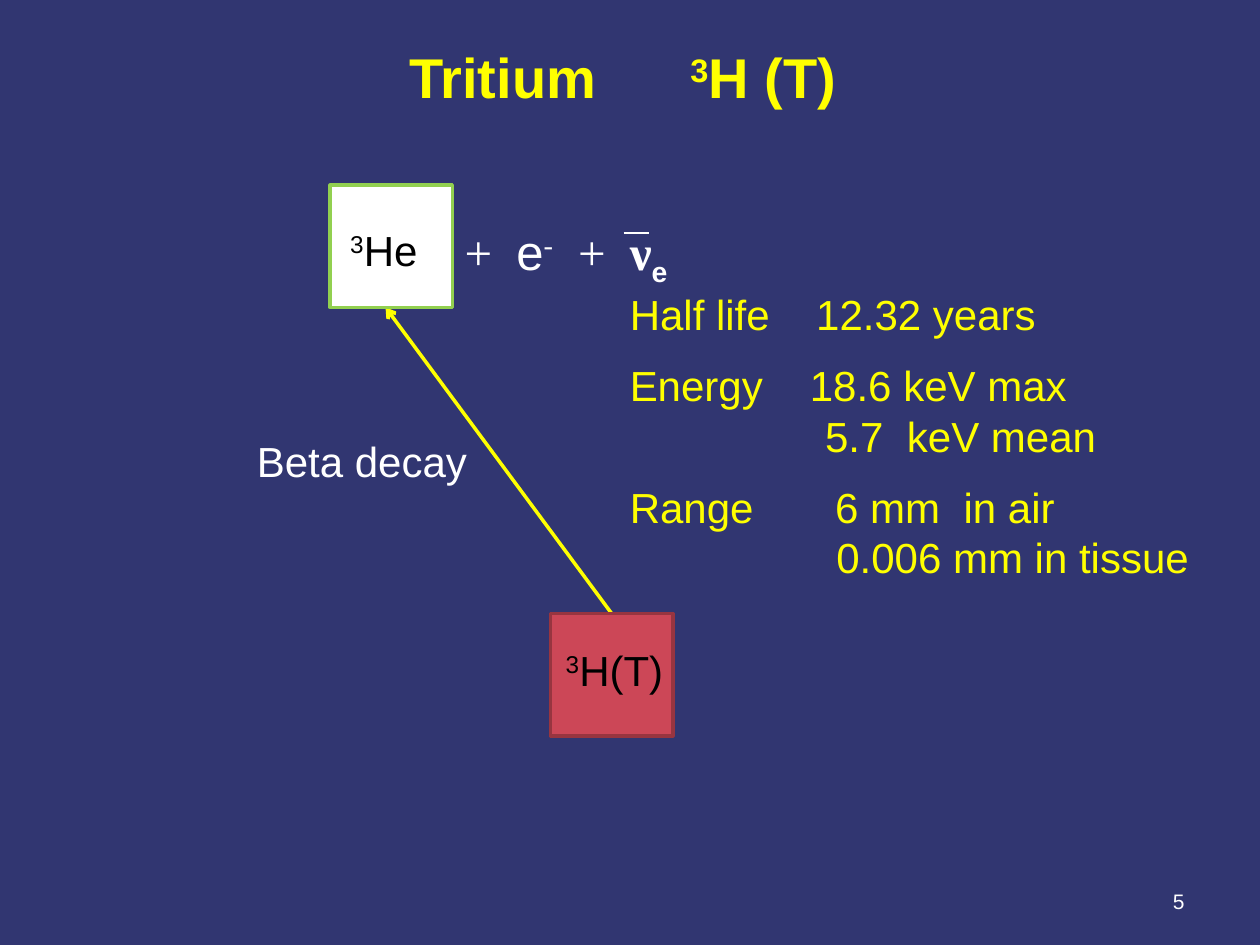
"""Build a slide on the beta decay of tritium."""
from lxml.etree import SubElement
from pptx import Presentation
from pptx.dml.color import RGBColor
from pptx.enum.shapes import MSO_CONNECTOR, MSO_SHAPE
from pptx.enum.text import MSO_ANCHOR, MSO_AUTO_SIZE, PP_ALIGN
from pptx.oxml.ns import qn
from pptx.util import Inches, Pt

YELLOW, WHITE, BLACK = "FFFF00", "FFFFFF", "000000"
SERIF = "Times New Roman"
SUPERSCRIPT, SUBSCRIPT = {"baseline": 30}, {"baseline": -25}
SQUARE = 0.97

TITLE = [("Tritium\t", {}), ("3", SUPERSCRIPT), ("H (T)", {})]
EQUATION = [
    ("+\t", {"name": SERIF}),
    ("e", {}),
    ("-", {"name": SERIF, **SUPERSCRIPT}),
    ("\t+\t", {"name": SERIF}),
    ("ν", {"name": SERIF, "bold": True}),
    ("e", {"bold": True, **SUBSCRIPT}),
]
NUCLIDES = {
    "helium": dict(left=2.62, top=1.47, fill=WHITE, line="92D050", insets=(0.16, 0.1, 0.05),
                   runs=[("3", SUPERSCRIPT), ("He", {})]),
    "tritium": dict(left=4.37, top=4.87, fill="CC4757", line="973540", insets=(0.12, 0.05, 0.13),
                    runs=[("3", SUPERSCRIPT), ("H(T)", {})]),
}
FACTS = [
    ("Half life\t12.32 years", [1.48], 12),
    ("Energy\t18.6 keV max", [1.43], 0),
    ("\t5.7\tkeV mean", [1.55, 2.2], 12),
    ("Range\t6 mm\tin air", [1.63, 2.65], 0),
    ("\t0.006 mm in tissue", [1.64], 0),
]


def color(value):
    return RGBColor.from_string(value)


def add_runs(paragraph, runs, size, text_color, bold=False):
    for text, style in runs:
        run = paragraph.add_run()
        run.text = text
        run.font.size = Pt(size)
        run.font.name = style.get("name", "Arial")
        run.font.bold = style.get("bold", bold)
        run.font.color.rgb = color(text_color)
        if "baseline" in style:
            run._r.get_or_add_rPr().set("baseline", str(style["baseline"] * 1000))


def set_tabs(paragraph, stops):
    tab_list = SubElement(paragraph._p.get_or_add_pPr(), qn("a:tabLst"))
    for stop in stops:
        SubElement(tab_list, qn("a:tab"), pos=str(Inches(stop)), algn="l")


def place(shape, left, top, width, height):
    shape.left, shape.top = Inches(left), Inches(top)
    shape.width, shape.height = Inches(width), Inches(height)
    frame = shape.text_frame
    frame.word_wrap = True
    frame.auto_size = MSO_AUTO_SIZE.NONE
    frame.vertical_anchor = MSO_ANCHOR.TOP
    return frame


def add_text(slide, *box):
    return place(slide.shapes.add_textbox(0, 0, 0, 0), *box)


def add_line(slide, start, end, line_color, width, arrow=False):
    connector = slide.shapes.add_connector(
        MSO_CONNECTOR.STRAIGHT, *(Inches(value) for value in (*start, *end)))
    connector.line.color.rgb = color(line_color)
    connector.line.width = Pt(width)
    SubElement(connector._element.spPr, qn("a:effectLst"))
    if arrow:
        SubElement(connector.line._get_or_add_ln(), qn("a:tailEnd"), type="arrow")


def add_nuclide(slide, left, top, fill, line, insets, runs):
    square = slide.shapes.add_shape(
        MSO_SHAPE.RECTANGLE, *(Inches(value) for value in (left, top, SQUARE, SQUARE)))
    square.shadow.inherit = False
    square.fill.solid()
    square.fill.fore_color.rgb = color(fill)
    square.line.color.rgb = color(line)
    square.line.width = Pt(2)
    frame = square.text_frame
    frame.word_wrap = False
    frame.vertical_anchor = MSO_ANCHOR.MIDDLE
    frame.margin_left, frame.margin_top, frame.margin_bottom = map(Inches, insets)
    frame.margin_right = 0
    frame.paragraphs[0].alignment = PP_ALIGN.LEFT
    add_runs(frame.paragraphs[0], runs, 24, BLACK)


def add_facts(frame):
    for index, (text, stops, space_after) in enumerate(FACTS):
        paragraph = frame.add_paragraph() if index else frame.paragraphs[0]
        paragraph.space_after = Pt(space_after)
        set_tabs(paragraph, stops)
        add_runs(paragraph, [(text, {})], 24, YELLOW)


def add_slide_number(slide, number):
    frame = add_text(slide, 7.17, 6.95, 2.33, 0.4)
    frame.vertical_anchor = MSO_ANCHOR.MIDDLE
    paragraph = frame.paragraphs[0]
    paragraph.alignment = PP_ALIGN.RIGHT
    add_runs(paragraph, [(number, {})], 12, WHITE)
    run = paragraph.runs[0]._r
    run.tag = qn("a:fld")
    run.set("id", "{B6F15528-21DE-4FAA-801E-634DDDAF4B2B}")
    run.set("type", "slidenum")


def main():
    presentation = Presentation()
    presentation.slide_width, presentation.slide_height = Inches(10), Inches(7.5)
    presentation.element.set("firstSlideNum", "5")
    slide = presentation.slides.add_slide(presentation.slide_layouts[5])
    slide.background.fill.solid()
    slide.background.fill.fore_color.rgb = color("313671")

    title = place(slide.shapes.title, 3.15, 0.29, 4, 0.64).paragraphs[0]
    title.alignment = PP_ALIGN.LEFT
    set_tabs(title, [2.23])
    add_runs(title, TITLE, 32, YELLOW, bold=True)
    add_facts(add_text(slide, 4.9, 2.24, 4.86, 2.46))

    helium, tritium = NUCLIDES["helium"], NUCLIDES["tritium"]
    add_line(slide, (tritium["left"] + SQUARE / 2, tritium["top"]),
             (3.06, helium["top"] + SQUARE), YELLOW, 2, arrow=True)
    for nuclide in NUCLIDES.values():
        add_nuclide(slide, **nuclide)

    add_line(slide, (4.95, 1.85), (5.15, 1.85), WHITE, 0.75)
    equation = add_text(slide, 3.59, 1.71, 2.04, 0.57).paragraphs[0]
    set_tabs(equation, [0.41, 0.9, 1.31])
    add_runs(equation, EQUATION, 28, WHITE)
    decay = add_text(slide, 1.94, 3.41, 1.89, 0.5)
    decay.word_wrap = False
    add_runs(decay.paragraphs[0], [("Beta decay", {})], 24, WHITE)
    add_slide_number(slide, "5")
    presentation.save("out.pptx")


if __name__ == "__main__":
    main()
